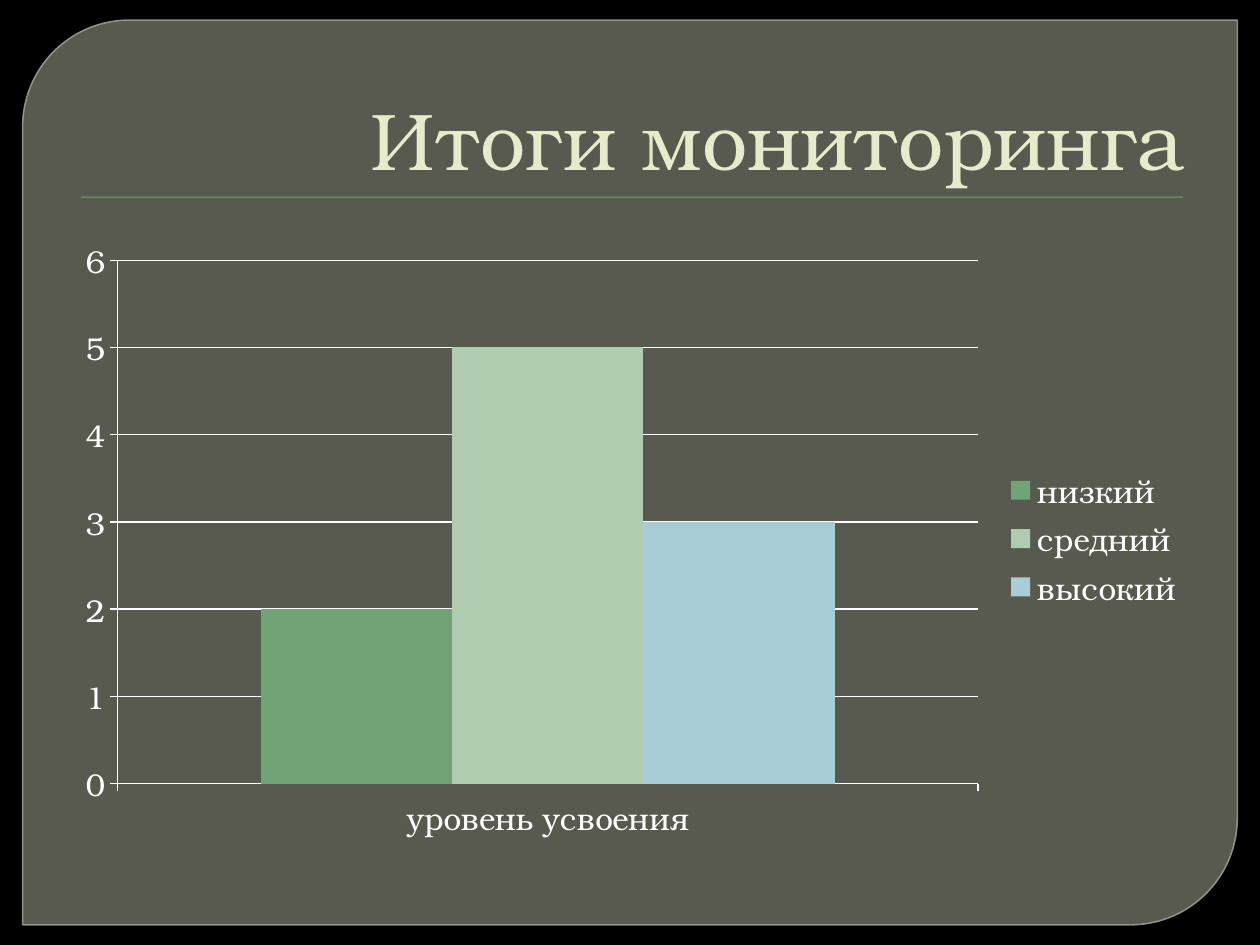
from lxml import etree
from pptx import Presentation
from pptx.chart.data import CategoryChartData
from pptx.dml.color import RGBColor
from pptx.enum.chart import XL_CHART_TYPE, XL_LEGEND_POSITION, XL_TICK_MARK
from pptx.enum.shapes import MSO_SHAPE
from pptx.enum.text import MSO_ANCHOR, PP_ALIGN
from pptx.oxml.ns import qn
from pptx.util import Inches, Pt

FONT = "TeX Gyre Bonum"
BLACK = RGBColor(0x00, 0x00, 0x00)
WHITE = RGBColor(0xFF, 0xFF, 0xFF)
PANEL = RGBColor(0x88, 0x8B, 0x7B)
BORDER = RGBColor(0x9D, 0xA0, 0x90)
CREAM = RGBColor(0xE7, 0xEA, 0xCB)
GREEN = RGBColor(0x72, 0xA3, 0x76)
PALE_GREEN = RGBColor(0xB0, 0xCC, 0xB0)
PALE_BLUE = RGBColor(0xA8, 0xCD, 0xD7)


def set_opacity(fill, percent):
    color = fill._xPr.find(qn("a:solidFill"))[0]
    etree.SubElement(color, qn("a:alpha"), val=str(percent * 1000))


prs = Presentation()
prs.slide_width, prs.slide_height = Inches(10), Inches(7.5)
s = prs.slides.add_slide(prs.slide_layouts[5])
s.background.fill.solid()
s.background.fill.fore_color.rgb = BLACK

# Panel and rule under the title
panel = s.shapes.add_shape(MSO_SHAPE.ROUND_2_DIAG_RECTANGLE,
                           Inches(0.18), Inches(0.16), Inches(9.64), Inches(7.18))
panel.adjustments[0] = 0.118
panel.adjustments[1] = 0
panel.shadow.inherit = False
panel.fill.solid()
panel.fill.fore_color.rgb = PANEL
set_opacity(panel.fill, 65)
panel.line.width = Pt(0.87)
panel.line.color.rgb = BORDER
set_opacity(panel.line.fill, 88)

rule = s.shapes.add_shape(MSO_SHAPE.RECTANGLE,
                          Inches(0.64), Inches(1.56), Inches(8.75), Inches(0.01))
rule.shadow.inherit = False
rule.fill.solid()
rule.fill.fore_color.rgb = GREEN
rule.line.fill.background()

# Title, brought in front of the panel
title = s.shapes.title
s.shapes._spTree.append(title._element)
title.left, title.top = Inches(0.5), Inches(0.28)
title.width, title.height = Inches(9), Inches(1.25)
tf = title.text_frame
tf.text = "Итоги мониторинга"
tf.vertical_anchor = MSO_ANCHOR.BOTTOM
p = tf.paragraphs[0]
p.alignment = PP_ALIGN.RIGHT
p.font.name = FONT
p.font.size = Pt(46)
p.font.color.rgb = CREAM

# Chart
levels = [("низкий", 2, GREEN), ("средний", 5, PALE_GREEN), ("высокий", 3, PALE_BLUE)]
data = CategoryChartData()
data.categories = ["уровень усвоения"]
for name, value, _ in levels:
    data.add_series(name, [value])
chart = s.shapes.add_chart(XL_CHART_TYPE.COLUMN_CLUSTERED, Inches(0.5), Inches(1.8),
                           Inches(9), Inches(4.95), data).chart
chart.has_title = False
chart.font.name = FONT
chart.font.size = Pt(18)
chart.font.color.rgb = WHITE
chart.has_legend = True
chart.legend.position = XL_LEGEND_POSITION.RIGHT
chart.legend.include_in_layout = False

plot = chart.plots[0]
plot.gap_width = 150
plot.overlap = 0
plot.vary_by_categories = False
for series, (_, _, color) in zip(plot.series, levels):
    series.format.fill.solid()
    series.format.fill.fore_color.rgb = color

value_axis = chart.value_axis
value_axis.minimum_scale, value_axis.maximum_scale = 0, 6
value_axis.major_unit = 1
value_axis.has_major_gridlines = True
for axis in (chart.category_axis, value_axis):
    axis.major_tick_mark = XL_TICK_MARK.OUTSIDE
for lines in (chart.category_axis, value_axis, value_axis.major_gridlines):
    lines.format.line.color.rgb = WHITE
    lines.format.line.width = Pt(0.75)

prs.save("out.pptx")
